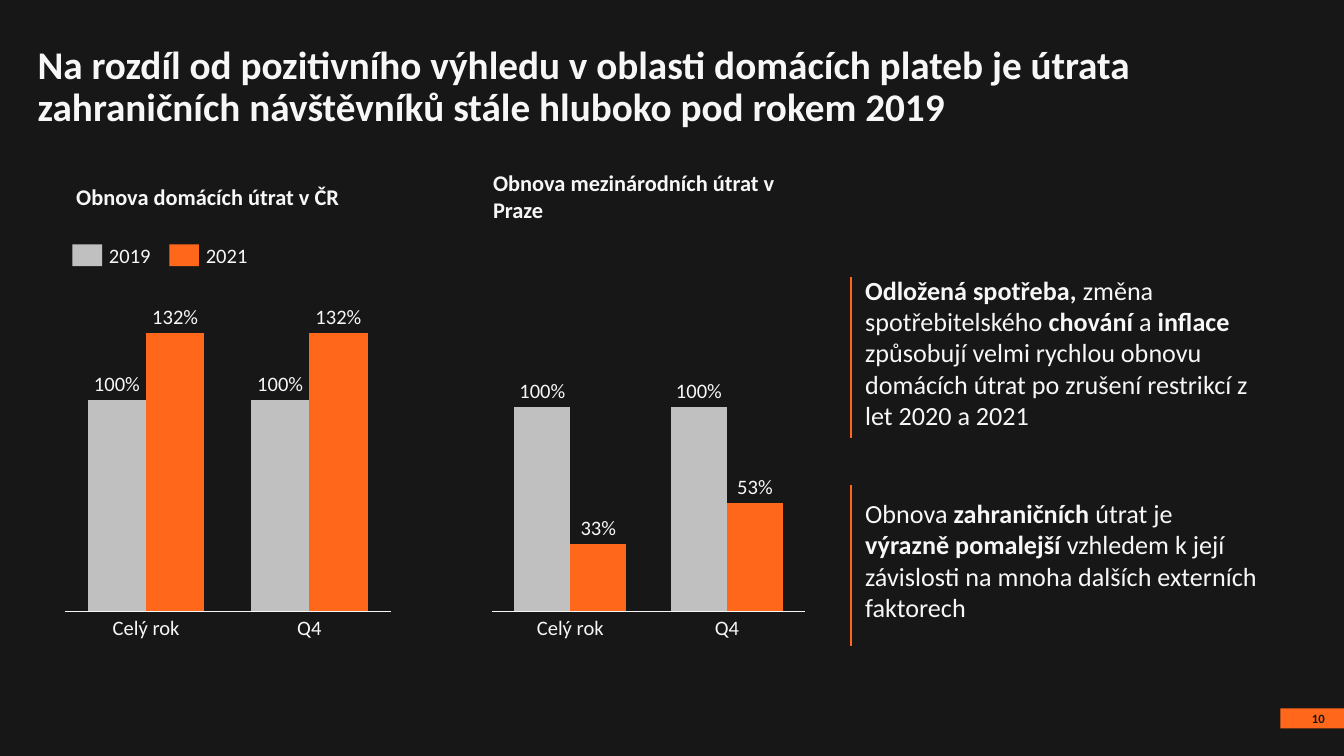
from pptx import Presentation
from pptx.chart.data import CategoryChartData
from pptx.dml.color import RGBColor
from pptx.enum.chart import XL_CHART_TYPE as ChartType, XL_TICK_LABEL_POSITION as LabelPosition
from pptx.enum.chart import XL_TICK_MARK as TickMark
from pptx.enum.shapes import MSO_CONNECTOR as Connector, MSO_SHAPE as Shape
from pptx.enum.text import MSO_ANCHOR as Anchor, MSO_AUTO_SIZE as AutoSize, PP_ALIGN as Align
from pptx.oxml import parse_xml
from pptx.oxml.ns import nsdecls, qn
from pptx.util import Cm, Pt

COLORS = {"background": "171717", "text": "F7F7F7", "accent": "FF671B", "base": "C0C0C0"}
FONT = "Calibri"
SERIES = {"2019": "base", "2021": "accent"}
CATEGORIES = [("Celý rok", 1.32), ("Q4", 0.53)]
GAP_WIDTH = 80
PLOT_INSET = 0.23
LABEL_HEIGHT = 0.41


def color(name):
    return RGBColor.from_string(COLORS[name])


class SlideBuilder:
    """Holds the style and the current slide; all lengths are in centimetres."""

    def __init__(self, presentation):
        self.slide = presentation.slides.add_slide(presentation.slide_layouts[5])
        self.shapes = self.slide.shapes
        fill = self.slide.background.fill
        fill.solid()
        fill.fore_color.rgb = color("background")

    def fill_text(self, shape, runs, size, ink="text", align=Align.LEFT, anchor=Anchor.MIDDLE,
                  spacing=1.0, insets=(0.25, 0.13), wrap=True):
        frame = shape.text_frame
        frame.auto_size = AutoSize.NONE
        frame.word_wrap = wrap
        frame.vertical_anchor = anchor
        frame.margin_left = frame.margin_right = Cm(insets[0])
        frame.margin_top = frame.margin_bottom = Cm(insets[1])
        paragraph = frame.paragraphs[0]
        paragraph.alignment = align
        paragraph.line_spacing = spacing
        for text, bold in runs:
            run = paragraph.add_run()
            run.text = text
            run.font.name = FONT
            run.font.size = Pt(size)
            run.font.bold = bold
            run.font.color.rgb = color(ink)

    def title(self, text, left, top, width, height):
        shape = self.shapes.title
        shape.left, shape.top, shape.width, shape.height = map(Cm, (left, top, width, height))
        self.fill_text(shape, [(text, True)], 21, anchor=Anchor.TOP, spacing=0.9, insets=(0, 0))

    def text(self, runs, left, top, width, height, size, **style):
        box = self.shapes.add_textbox(*map(Cm, (left, top, width, height)))
        self.fill_text(box, runs, size, **style)

    def label(self, text, left, top, width, align=Align.CENTER, anchor=Anchor.TOP):
        self.text([(text, False)], left, top, width, LABEL_HEIGHT, 11, align=align,
                  anchor=anchor, spacing=0.9, insets=(0, 0), wrap=False)

    def rectangle(self, fill_name, left, top, width, height):
        shape = self.shapes.add_shape(Shape.RECTANGLE, *map(Cm, (left, top, width, height)))
        shape.shadow.inherit = False
        shape.fill.solid()
        shape.fill.fore_color.rgb = color(fill_name)
        shape.line.fill.background()

    def vertical_line(self, left, top, height):
        line = self.shapes.add_connector(
            Connector.STRAIGHT, *map(Cm, (left, top, left, top + height)))
        line.line.color.rgb = color("accent")
        line.line.width = Pt(1)
        line._element.spPr.append(parse_xml(f"<a:effectLst {nsdecls('a')}/>"))

    def legend(self, left, top, step):
        for index, (name, fill_name) in enumerate(SERIES.items()):
            x = left + index * step
            self.rectangle(fill_name, x, top, 0.56, LABEL_HEIGHT)
            self.label(name, x + 0.69, top + 0.03, 0.86, Align.LEFT, Anchor.MIDDLE)

    def column_chart(self, heights, left, top, width, height):
        """Draw columns whose heights are percentages of the plot height."""
        data = CategoryChartData()
        data.categories = ["1", "2"]
        for number, values in enumerate(heights, 1):
            data.add_series(f"Series {number}", values)
        chart = self.shapes.add_chart(
            ChartType.COLUMN_CLUSTERED, *map(Cm, (left, top, width, height)), data).chart
        chart.has_legend = chart.has_title = False
        chart.font.name = FONT
        chart.font.size = Pt(10)
        chart.font.color.rgb = color("text")

        plot = chart.plots[0]
        plot.gap_width = GAP_WIDTH
        plot.overlap = 0
        plot.vary_by_categories = False
        for series, fill_name in zip(plot.series, SERIES.values()):
            series.format.fill.solid()
            series.format.fill.fore_color.rgb = color(fill_name)

        value_axis = chart.value_axis
        value_axis.visible = False
        value_axis.has_major_gridlines = False
        value_axis.minimum_scale, value_axis.maximum_scale = 0, 100
        category_axis = chart.category_axis
        category_axis.tick_label_position = LabelPosition.NONE
        category_axis.major_tick_mark = category_axis.minor_tick_mark = TickMark.NONE
        category_axis.format.line.color.rgb = color("text")
        category_axis.format.line.width = Pt(0.75)
        self.fix_plot_area(chart, PLOT_INSET / width, PLOT_INSET / height)

    def fix_plot_area(self, chart, x, y):
        area = chart._chartSpace.chart.plotArea
        for layout in area.findall(qn("c:layout")):
            area.remove(layout)
        values = {"x": x, "y": y, "w": 1 - 2 * x, "h": 1 - 2 * y}
        sizes = "".join(f'<c:{key} val="{value:.4f}"/>' for key, value in values.items())
        area.insert(0, parse_xml(
            f'<c:layout {nsdecls("c")}><c:manualLayout><c:layoutTarget val="inner"/>'
            f'<c:xMode val="edge"/><c:yMode val="edge"/>{sizes}</c:manualLayout></c:layout>'))

    def column_labels(self, heights, percentages, left, top, width, height):
        """Put percentages above the columns and category names below the axis."""
        slot = (width - 2 * PLOT_INSET) / len(CATEGORIES)
        column = slot / (len(SERIES) + GAP_WIDTH / 100)
        plot_height = height - 2 * PLOT_INSET
        for index, (name, name_width) in enumerate(CATEGORIES):
            center = left + PLOT_INSET + (index + 0.5) * slot
            self.label(name, center - name_width / 2, top + height - 0.11, name_width)
            for side, values, shown in zip((-0.5, 0.5), heights, percentages):
                column_top = top + PLOT_INSET + plot_height * (1 - values[index] / 100)
                text = f"{shown[index]}%"
                label_width = 0.27 * len(text)
                self.label(text, center + side * column - label_width / 2,
                           column_top - 0.08 - LABEL_HEIGHT, label_width, anchor=Anchor.BOTTOM)

    def insight(self, runs, left, top):
        self.text(runs, left, top, 8, 3.56, 14)
        self.vertical_line(left - 0.02, top + 0.35, 3.05)

    def page_number(self, number):
        self.rectangle("accent", 24.2, 13.39, 1.2, 0.38)
        self.text([(number, True)], 24.2, 13.39, 0.84, 0.38, 6.8, ink="background",
                  align=Align.RIGHT, insets=(0, 0))


def main():
    presentation = Presentation()
    presentation.slide_width, presentation.slide_height = Cm(25.4), Cm(14.29)
    builder = SlideBuilder(presentation)
    builder.page_number("10")
    builder.title("Na rozdíl od pozitivního výhledu v oblasti domácích plateb je útrata "
                  "zahraničních návštěvníků stále hluboko pod rokem 2019", 0.71, 0.86, 24.03, 1.6)

    builder.insight([
        ("Odložená spotřeba, ", True), ("změna spotřebitelského ", False), ("chování", True),
        (" a ", False), ("inflace", True),
        (" způsobují velmi rychlou obnovu domácích útrat po zrušení restrikcí "
         "z let 2020 a 2021", False)], 16.1, 4.88)
    builder.insight([
        ("Obnova ", False), ("zahraničních", True), (" útrat je ", False),
        ("výrazně pomalejší ", True),
        ("vzhledem k její závislosti na mnoha dalších externích faktorech", False)], 16.1, 8.81)

    builder.text([("Obnova domácích útrat v ČR", True)], 1.19, 3.12, 5.54, 1.19, 12)
    builder.text([("Obnova mezinárodních útrat v Praze", True)], 9.07, 3.12, 6.38, 1.19, 12)
    builder.legend(1.37, 4.62, 1.83)

    domestic = [(76, 76), (100, 100)], [(100, 100), (132, 132)], (0.99, 6.07, 6.63, 5.72)
    foreign = [(100, 100), (33, 53)], [(100, 100), (33, 53)], (9.07, 7.47, 6.38, 4.32)
    for heights, percentages, place in (domestic, foreign):
        builder.column_chart(heights, *place)
        builder.column_labels(heights, percentages, *place)

    presentation.save("out.pptx")


if __name__ == "__main__":
    main()
